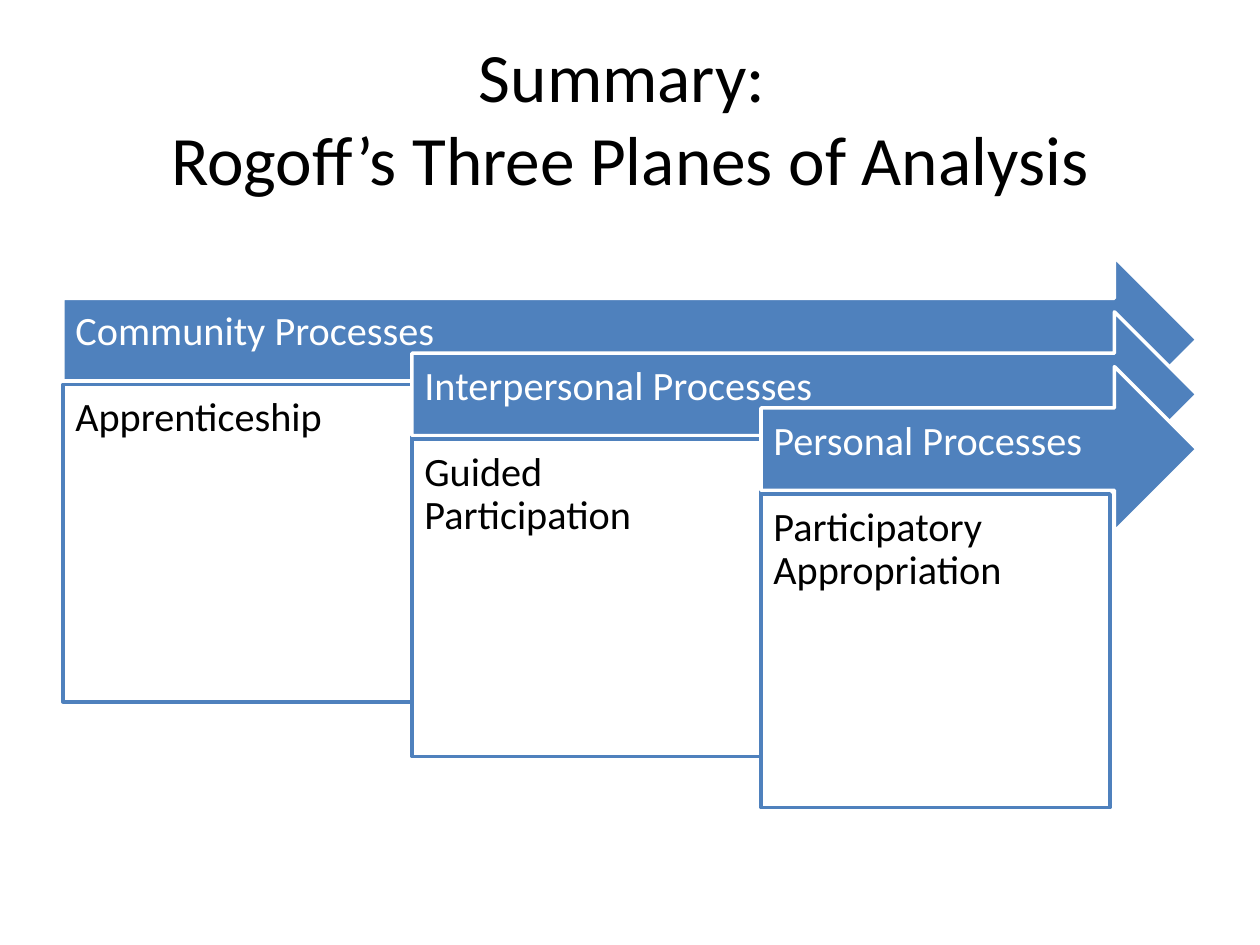
from pptx import Presentation
from pptx.dml.color import RGBColor
from pptx.enum.shapes import MSO_SHAPE
from pptx.enum.text import MSO_ANCHOR, MSO_AUTO_SIZE, PP_ALIGN
from pptx.util import Inches, Pt

BLUE, WHITE, BLACK = "4F81BD", "FFFFFF", "000000"
LEFT, TOP, RIGHT = 0.5, 2.04, 9.5
COL, STEP = 2.77, 0.435
HEAD, DROP = 1.31, 1.01
PLANES = [
    ("Community Processes", "Apprenticeship", 2.52),
    ("Interpersonal Processes", "Guided Participation", 2.52),
    ("Personal Processes", "Participatory Appropriation", 2.49),
]


def paint(color, code):
    """Set a colour from a hex string."""
    color.rgb = RGBColor.from_string(code)


def write(shape, text, size=23, color=BLACK, align=PP_ALIGN.LEFT,
          anchor=MSO_ANCHOR.TOP, pads=(0.1, 0.1, 0.1, 0.1), lead=0.9):
    """Put formatted text into a shape."""
    frame = shape.text_frame
    frame.word_wrap = True
    frame.auto_size = MSO_AUTO_SIZE.NONE
    frame.vertical_anchor = anchor
    (frame.margin_left, frame.margin_top,
     frame.margin_right, frame.margin_bottom) = map(Inches, pads)
    frame.text = text
    for para in frame.paragraphs:
        para.alignment = align
        para.line_spacing = lead
        para.font.size = Pt(size)
        para.font.name = "Calibri"
        paint(para.font.color, color)


def block(slide, kind, box, fill, line):
    """Add a filled and outlined shape."""
    shape = slide.shapes.add_shape(kind, *map(Inches, box))
    shape.shadow.inherit = False
    shape.fill.solid()
    paint(shape.fill.fore_color, fill)
    paint(shape.line.color, line)
    shape.line.width = Pt(2)
    return shape


def plane(slide, index, name, detail, height):
    """Add one arrow and the box below it."""
    left, top = LEFT + index * COL, TOP + index * STEP
    arrow = block(slide, MSO_SHAPE.RIGHT_ARROW,
                  (left, top, RIGHT - left, HEAD), BLUE, WHITE)
    write(arrow, name, color=WHITE, anchor=MSO_ANCHOR.MIDDLE,
          pads=(0.1, 0.1, 0.28, 0.21))
    panel = block(slide, MSO_SHAPE.RECTANGLE,
                  (left, top + DROP, COL, height), WHITE, BLUE)
    write(panel, detail)


def head(slide, text):
    """Place and format the title."""
    title = slide.shapes.title
    title.left, title.top, title.width, title.height = map(
        Inches, (LEFT, 0.3, RIGHT - LEFT, 1.25))
    write(title, text, size=39.6, align=PP_ALIGN.CENTER,
          anchor=MSO_ANCHOR.MIDDLE, pads=(0.1, 0.05, 0.1, 0.05), lead=1.0)


def main():
    """Build and save the slide."""
    deck = Presentation()
    deck.slide_width, deck.slide_height = Inches(10), Inches(7.5)
    slide = deck.slides.add_slide(deck.slide_layouts[5])
    head(slide, "Summary: \vRogoff’s Three Planes of Analysis")
    for index, row in enumerate(PLANES):
        plane(slide, index, *row)
    deck.save("out.pptx")


if __name__ == "__main__":
    main()
